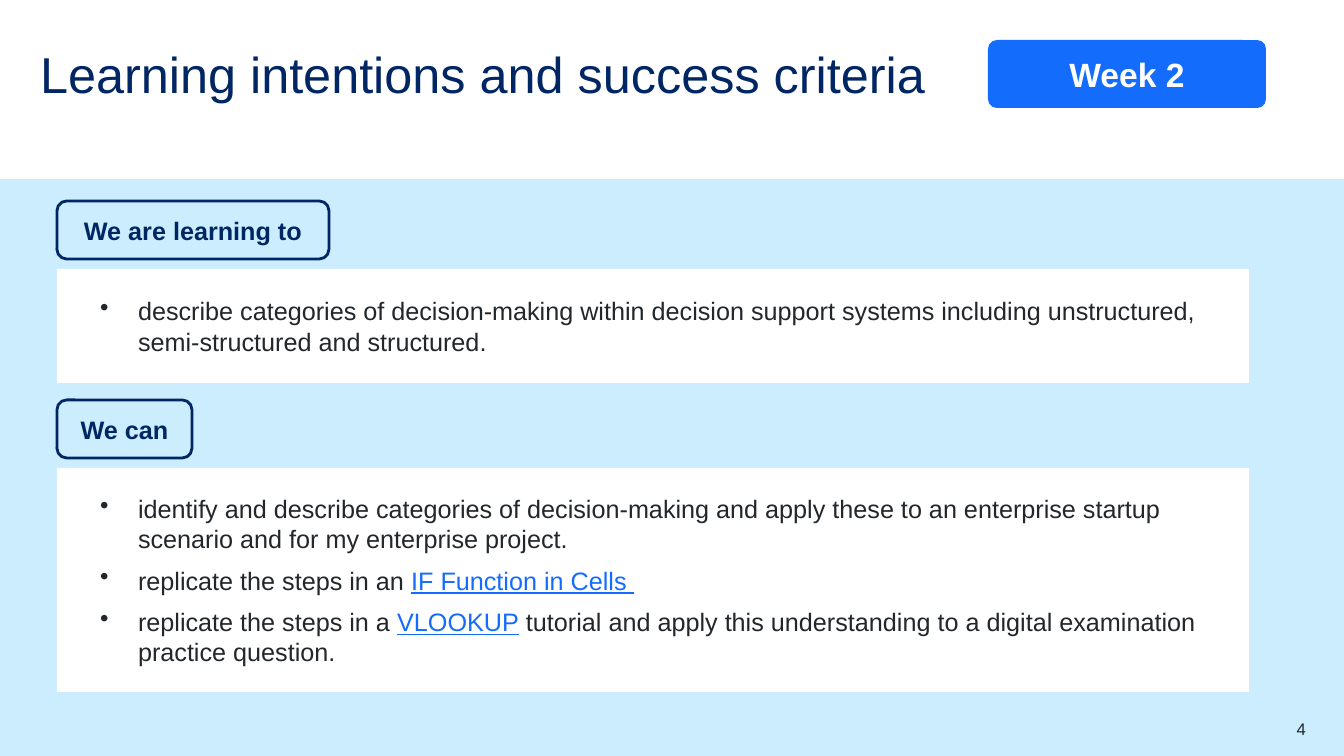
import pptx
import pptx.util
import pptx.dml.color
import pptx.enum.shapes
import pptx.enum.text
import pptx.oxml.ns
import lxml.etree

RGBColor = pptx.dml.color.RGBColor
Shape = pptx.enum.shapes.MSO_SHAPE
Anchor = pptx.enum.text.MSO_ANCHOR
Align = pptx.enum.text.PP_ALIGN

NAVY = RGBColor(0x00, 0x26, 0x64)
BLUE = RGBColor(0x14, 0x6C, 0xFD)
SKY = RGBColor(0xCB, 0xED, 0xFD)
WHITE = RGBColor(0xFF, 0xFF, 0xFF)
INK = RGBColor(0x22, 0x27, 0x2B)

FONT = "Arial"
SLIDE_WIDTH, SLIDE_HEIGHT = 1344, 756
LABEL_HEIGHT, LABEL_GAP = 58, 10

LEARNING = [
    [("describe categories of decision-making within decision support systems "
      "including unstructured, semi-structured and structured.", False)],
]
SUCCESS = [
    [("identify and describe categories of decision-making and apply these to an "
      "enterprise startup scenario and for my enterprise project.", False)],
    [("replicate the steps in an ", False), ("IF Function in Cells ", True)],
    [("replicate the steps in a ", False), ("VLOOKUP", True),
     (" tutorial and apply this understanding to a digital examination "
      "practice question.", False)],
]


def px(length):
    """Turn slide pixels into EMU."""
    return pptx.util.Emu(round(length * 914400 / 100.8))


def set_margins(frame, left=0, top=0, right=0, bottom=0):
    """Set the insets of a text frame."""
    frame.margin_left, frame.margin_top = px(left), px(top)
    frame.margin_right, frame.margin_bottom = px(right), px(bottom)


def style(paragraph, size, color, bold=False, align=Align.LEFT):
    """Format a whole paragraph."""
    paragraph.alignment = align
    font = paragraph.font
    font.name, font.size, font.bold = FONT, pptx.util.Pt(size), bold
    font.color.rgb = color


def add_box(slide, kind, box, fill=None, line=None):
    """Add a flat shape with an optional fill and outline."""
    shape = slide.shapes.add_shape(kind, *map(px, box))
    shape.shadow.inherit = False
    if fill is None:
        shape.fill.background()
    else:
        shape.fill.solid()
        shape.fill.fore_color.rgb = fill
    if line is None:
        shape.line.fill.background()
    else:
        shape.line.color.rgb = line
        shape.line.width = pptx.util.Pt(2)
    frame = shape.text_frame
    frame.word_wrap = True
    frame.vertical_anchor = Anchor.MIDDLE
    return shape


def add_label(slide, box, text, size, color, fill=None, line=None):
    """Add a rounded box with one bold centred line."""
    shape = add_box(slide, Shape.ROUNDED_RECTANGLE, box, fill, line)
    set_margins(shape.text_frame, top=5, bottom=5)
    paragraph = shape.text_frame.paragraphs[0]
    paragraph.text = text
    style(paragraph, size, color, True, Align.CENTER)
    return shape


def add_bullet(paragraph, indent):
    """Give a paragraph a hanging round bullet."""
    properties = paragraph._p.get_or_add_pPr()
    properties.set("marL", str(px(indent)))
    properties.set("indent", str(-px(indent)))
    bullet = lxml.etree.SubElement(properties, pptx.oxml.ns.qn("a:buChar"))
    bullet.set("char", "•")


def add_header(slide, box):
    """Place the title and the week badge."""
    left, top, width, height = box
    title = slide.shapes.title
    title.left, title.top = px(left), px(top + 6)
    title.width, title.height = px(1131), px(58)
    frame = title.text_frame
    frame.word_wrap = True
    frame.vertical_anchor = Anchor.BOTTOM
    set_margins(frame)
    paragraph = frame.paragraphs[0]
    paragraph.text = "Learning intentions and success criteria"
    paragraph.line_spacing = 0.9
    style(paragraph, 36, NAVY)
    badge = add_label(slide, (left + width - 278, top, 278, height),
                      "Week 2", 24, WHITE, fill=BLUE)
    badge.adjustments[0] = 0.13


def add_section(slide, box, label, label_width, items, space_after):
    """Place an outlined label above a white panel of bullets."""
    left, top, width, height = box
    add_label(slide, (left, top, label_width, LABEL_HEIGHT), label, 18, NAVY, line=NAVY)
    offset = LABEL_HEIGHT + LABEL_GAP
    panel = add_box(slide, Shape.RECTANGLE,
                    (left, top + offset, width, height - offset), fill=WHITE)
    frame = panel.text_frame
    set_margins(frame, 43, 5, 10, 5)
    for index, item in enumerate(items):
        paragraph = frame.add_paragraph() if index else frame.paragraphs[0]
        paragraph.space_after = pptx.util.Pt(space_after)
        style(paragraph, 18, INK)
        add_bullet(paragraph, 38)
        for text, linked in item:
            run = paragraph.add_run()
            run.text = text
            if linked:
                run.font.color.rgb = BLUE
                run.font.underline = True


def add_page_number(slide, box, number):
    """Place the page number at the right of its box."""
    frame = slide.shapes.add_textbox(*map(px, box)).text_frame
    frame.word_wrap = True
    set_margins(frame)
    frame.paragraphs[0].text = str(number)
    style(frame.paragraphs[0], 12, INK, align=Align.RIGHT)


def main():
    """Build and save the slide."""
    presentation = pptx.Presentation()
    presentation.slide_width = px(SLIDE_WIDTH)
    presentation.slide_height = px(SLIDE_HEIGHT)
    slide = presentation.slides.add_slide(presentation.slide_layouts[5])
    add_box(slide, Shape.RECTANGLE, (0, 179, SLIDE_WIDTH, SLIDE_HEIGHT - 179), fill=SKY)
    add_header(slide, (40, 40, 1226, 68))
    add_section(slide, (57, 201, 1192, 182), "We are learning to", 272, LEARNING, 0)
    add_section(slide, (57, 400, 1192, 292), "We can", 135, SUCCESS, 8)
    add_page_number(slide, (1227, 719, 79, 20), 4)
    presentation.save("out.pptx")


if __name__ == "__main__":
    main()
